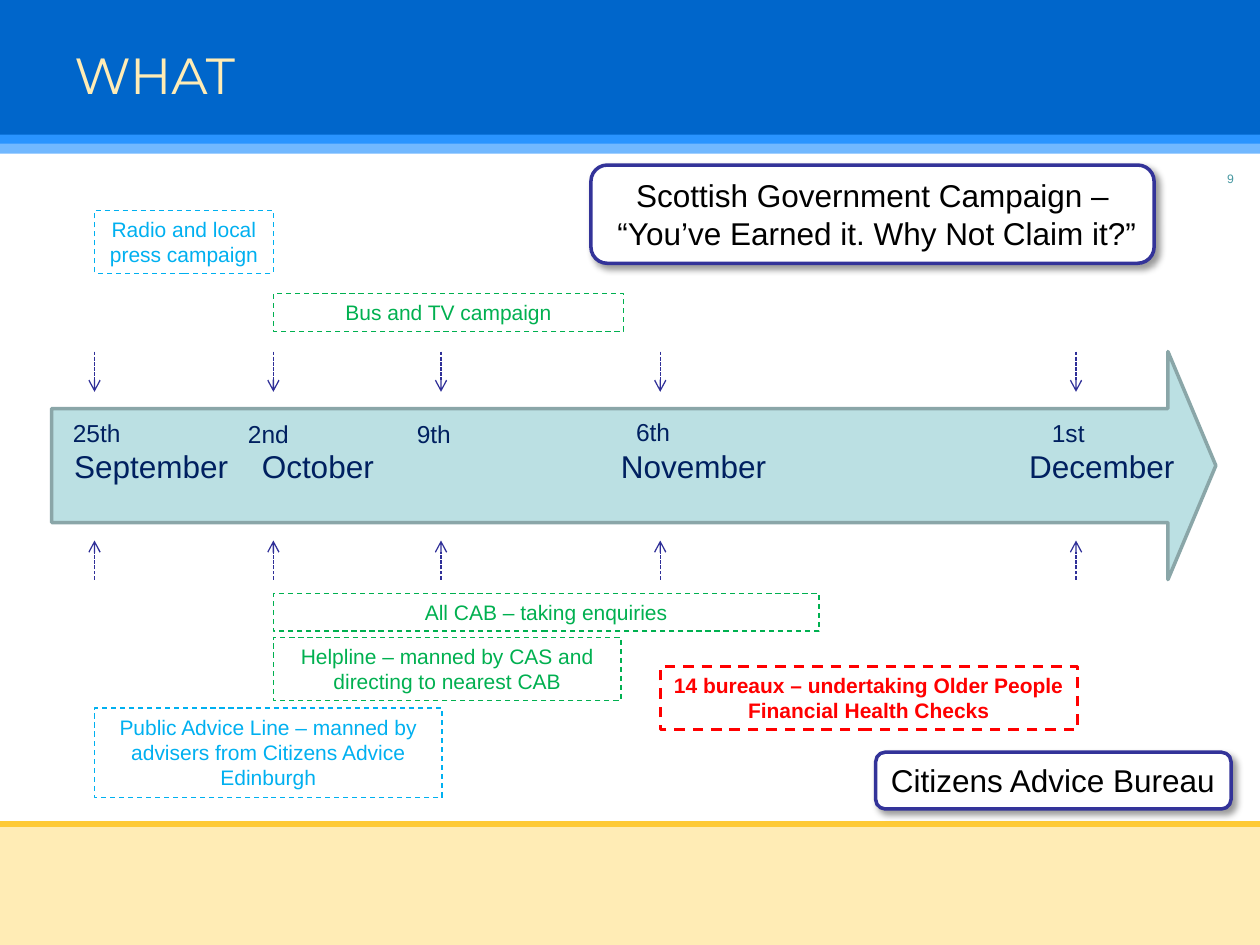
"""Build the campaign timeline slide."""
import pptx
import pptx.dml.color
import pptx.enum.dml
import pptx.enum.shapes
import pptx.enum.text
import pptx.oxml
import pptx.oxml.ns
import pptx.util

Inches = pptx.util.Inches
FORM = pptx.enum.shapes.MSO_SHAPE
DASH = pptx.enum.dml.MSO_LINE
ALIGN = pptx.enum.text.PP_ALIGN
ANCHOR = pptx.enum.text.MSO_ANCHOR
HUES = {
    "pale": "71B8FF", "sky": "2994FF", "blue": "0066CB", "cream": "FFECB5",
    "gold": "FECA36", "teal": "4597A0", "aqua": "BBE0E3", "slate": "8AA6A8",
    "navy": "002060", "ink": "2F2F98", "frame": "333399", "cyan": "00B0F0",
    "green": "00B050", "red": "FF0000", "black": "000000", "white": "FFFFFF",
}


def tint(name):
    return pptx.dml.color.RGBColor.from_string(HUES[name])


def parse(xml):
    return pptx.oxml.parse_xml(xml.replace(" ", f" {pptx.oxml.ns.nsdecls('a')} ", 1))


def write(frame, text, size=12, hue="black", font="Arial", bold=False,
          align=ALIGN.LEFT, anchor=ANCHOR.TOP, wrap=True, tabs=()):
    frame.word_wrap = wrap
    frame.vertical_anchor = anchor
    for i, line in enumerate(text.split("\n")):
        para = frame.add_paragraph() if i else frame.paragraphs[0]
        para.alignment = align
        if tabs:
            stops = "".join(f'<a:tab pos="{Inches(t)}" algn="l"/>' for t in tabs)
            para._p.get_or_add_pPr().append(parse(f"<a:tabLst >{stops}</a:tabLst>"))
        run = para.add_run()
        run.text = line
        run.font.size = pptx.util.Pt(size)
        run.font.name = font
        run.font.bold = bold
        run.font.color.rgb = tint(hue)


class Page:
    def __init__(self, deck):
        self.slide = deck.slides.add_slide(deck.slide_layouts[5])
        self.shapes = self.slide.shapes

    def stroke(self, line, hue, width, dash=None):
        line.color.rgb = tint(hue)
        line.width = pptx.util.Pt(width)
        if dash:
            line.dash_style = dash

    def title(self, text, *box):
        head = self.shapes.title
        head.left, head.top, head.width, head.height = map(Inches, box)
        self.shapes.element.append(head.element)
        write(head.text_frame, text, size=29, hue="cream", font="Montserrat",
              anchor=ANCHOR.MIDDLE)

    def shape(self, form, box, fill=None, edge=None, width=0.75, dash=None):
        item = self.shapes.add_shape(form, *map(Inches, box))
        item.shadow.inherit = False
        if fill:
            item.fill.solid()
            item.fill.fore_color.rgb = tint(fill)
        else:
            item.fill.background()
        if edge:
            self.stroke(item.line, edge, width, dash)
        else:
            item.line.fill.background()
        return item

    def line(self, start, end, hue, width, dash=None, arrow=False):
        item = self.shapes.add_connector(
            pptx.enum.shapes.MSO_CONNECTOR.STRAIGHT, *map(Inches, start + end))
        self.stroke(item.line, hue, width, dash)
        if arrow:
            item.line._get_or_add_ln().append(parse('<a:tailEnd type="arrow"/>'))
        item.element.spPr.append(parse("<a:effectLst />"))

    def label(self, text, *box, **style):
        item = self.shapes.add_textbox(*map(Inches, box))
        write(item.text_frame, text, wrap=False, **style)

    def task(self, text, hue, *box, width=0.75, bold=False):
        item = self.shape(FORM.RECTANGLE, box, None, hue, width, DASH.DASH)
        write(item.text_frame, text, hue=hue, bold=bold, align=ALIGN.CENTER)

    def card(self, text, *box, align=ALIGN.LEFT):
        item = self.shape(FORM.ROUNDED_RECTANGLE, box, "white", "frame", 2)
        glow = parse('<a:outerShdw blurRad="50800" dist="38100" dir="2700000" '
                     'algn="tl" rotWithShape="0"><a:srgbClr val="000000">'
                     '<a:alpha val="40000"/></a:srgbClr></a:outerShdw>')
        item.element.spPr.find(pptx.oxml.ns.qn("a:effectLst")).append(glow)
        write(item.text_frame, text, size=18, align=align, wrap=False)


def main():
    deck = pptx.Presentation()
    deck.slide_width, deck.slide_height = Inches(10), Inches(7.5)
    page = Page(deck)

    for hue, top, high in (("pale", 0, 1.22), ("sky", 0, 1.14),
                           ("blue", 0, 1.07), ("cream", 6.56, 0.94)):
        page.shape(FORM.RECTANGLE, (0, top, 10, high), hue)
    page.line((10, 6.54), (0, 6.54), "gold", 3)
    page.title("WHAT", 0.49, 0.15, 9, 0.87)
    page.label("9", 9.64, 1.31, 0.25, 0.2, size=7, hue="teal")

    band = page.shape(FORM.RIGHT_ARROW, (0.41, 2.79, 9.24, 1.81), "aqua", "slate", 2)
    band.adjustments[0], band.adjustments[1] = 0.5, 0.21
    write(band.text_frame, "\tSeptember\tOctober\tNovember\tDecember", size=18,
          hue="navy", anchor=ANCHOR.MIDDLE, tabs=(0.08, 1.57, 4.42, 7.66))

    dates = (("25th", 0.75, 0.48, 3.27, 0.58), ("2nd", 2.17, 1.87, 3.28, 0.53),
             ("9th", 3.5, 3.21, 3.28, 0.47), ("6th", 5.24, 4.95, 3.26, 0.47),
             ("1st", 8.54, 8.25, 3.27, 0.46))
    for day, x, left, top, wide in dates:
        for start, end in ((2.79, 3.11), (4.6, 4.29)):
            page.line((x, start), (x, end), "ink", 0.75, DASH.SQUARE_DOT, True)
        page.label(day, left, top, wide, 0.34, size=14, hue="navy")

    page.card("Scottish Government Campaign –\n “You’ve Earned it. Why Not Claim it?”",
              4.69, 1.31, 4.47, 0.78, align=ALIGN.CENTER)
    page.card("Citizens Advice Bureau", 6.95, 5.97, 2.82, 0.45)

    page.task("Radio and local press campaign", "cyan", 0.75, 1.67, 1.42, 0.5)
    page.task("Bus and TV campaign", "green", 2.17, 2.33, 2.78, 0.3)
    page.task("Public Advice Line – manned by advisers from Citizens Advice Edinburgh",
              "cyan", 0.75, 5.62, 2.76, 0.71)
    page.task("Helpline – manned by CAS and directing to nearest CAB",
              "green", 2.17, 5.06, 2.76, 0.5)
    page.task("All CAB – taking enquiries", "green", 2.17, 4.71, 4.33, 0.3)
    page.task("14 bureaux – undertaking Older People Financial Health Checks",
              "red", 5.24, 5.29, 3.31, 0.5, width=1.5, bold=True)
    deck.save("out.pptx")


if __name__ == "__main__":
    main()
